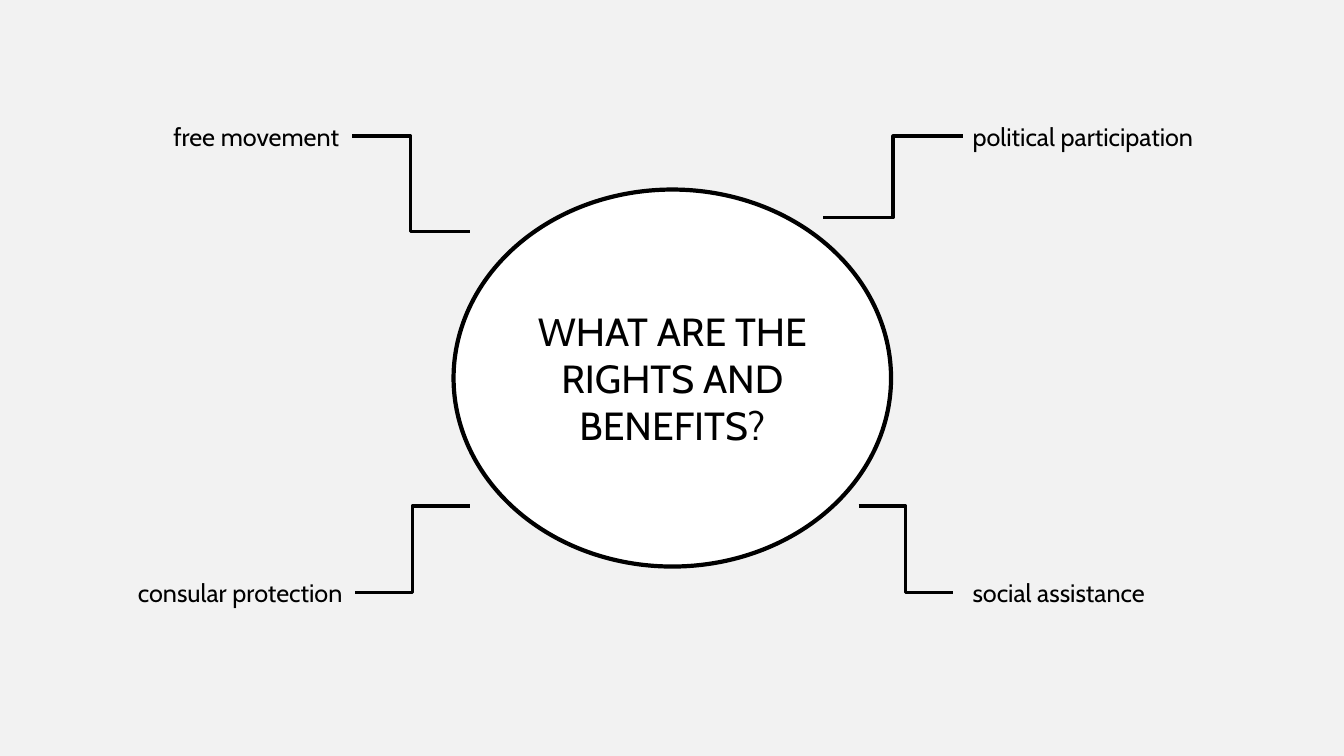
import pptx
import pptx.dml.color
import pptx.enum.shapes
import pptx.enum.text
import pptx.oxml
import pptx.oxml.ns
import pptx.util
from pptx.util import Pt

# Content: label, side, label width, connector start (at ellipse) and end (at label)
QUESTION = "WHAT ARE THE RIGHTS AND BENEFITS?"
BENEFITS = [
    ("political participation", "right", 198.7, (588.2, 155.5), (687.6, 97.2)),
    ("social assistance", "right", 198.7, (613.4, 361.4), (680.4, 423.4)),
    ("free movement", "left", 134.6, (335.5, 165.6), (251.3, 97.2)),
    ("consular protection", "left", 162, (335.5, 361.4), (253.4, 423.4)),
]
ELLIPSE = (324, 135.4, 312.5, 269.3)
RIGHT_LABELS = 687.6
LABEL_HEIGHT = 28.8
FONT = "Cabin"
BLACK, WHITE, GREY = "000000", "FFFFFF", "F2F2F2"


def color(hex_string):
    return pptx.dml.color.RGBColor.from_string(hex_string)


def write(shape, text, size, align="LEFT", anchor="TOP"):
    frame = shape.text_frame
    frame.word_wrap = True
    frame.vertical_anchor = getattr(pptx.enum.text.MSO_ANCHOR, anchor)
    paragraph = frame.paragraphs[0]
    paragraph.alignment = getattr(pptx.enum.text.PP_ALIGN, align)
    run = paragraph.add_run()
    run.text = text
    run.font.name = FONT
    run.font.size = Pt(size)
    run.font.color.rgb = color(BLACK)


def draw_line(line, width):
    line.color.rgb = color(BLACK)
    line.width = Pt(width)


# Slide
presentation = pptx.Presentation()
presentation.slide_width, presentation.slide_height = Pt(960), Pt(540)
slide = presentation.slides.add_slide(presentation.slide_layouts[6])
slide.background.fill.solid()
slide.background.fill.fore_color.rgb = color(GREY)

# Central question
ellipse = slide.shapes.add_shape(
    pptx.enum.shapes.MSO_SHAPE.OVAL, *map(Pt, ELLIPSE))
ellipse.shadow.inherit = False
ellipse.fill.solid()
ellipse.fill.fore_color.rgb = color(WHITE)
draw_line(ellipse.line, 3)
write(ellipse, QUESTION, 28, align="CENTER", anchor="MIDDLE")

# Benefits, each with an elbow connector level with the middle of its label
for text, side, width, start, end in BENEFITS:
    connector = slide.shapes.add_connector(
        pptx.enum.shapes.MSO_CONNECTOR.ELBOW, *map(Pt, start + end))
    draw_line(connector.line, 2.25)
    properties = connector._element.spPr
    properties.append(pptx.oxml.parse_xml(
        f"<a:effectLst {pptx.oxml.ns.nsdecls('a')}/>"))

    left = RIGHT_LABELS if side == "right" else end[0] - width
    label = slide.shapes.add_textbox(
        Pt(left), Pt(end[1] - LABEL_HEIGHT / 2), Pt(width), Pt(LABEL_HEIGHT))
    label.text_frame.auto_size = pptx.enum.text.MSO_AUTO_SIZE.SHAPE_TO_FIT_TEXT
    write(label, text, 18)

presentation.save("out.pptx")
